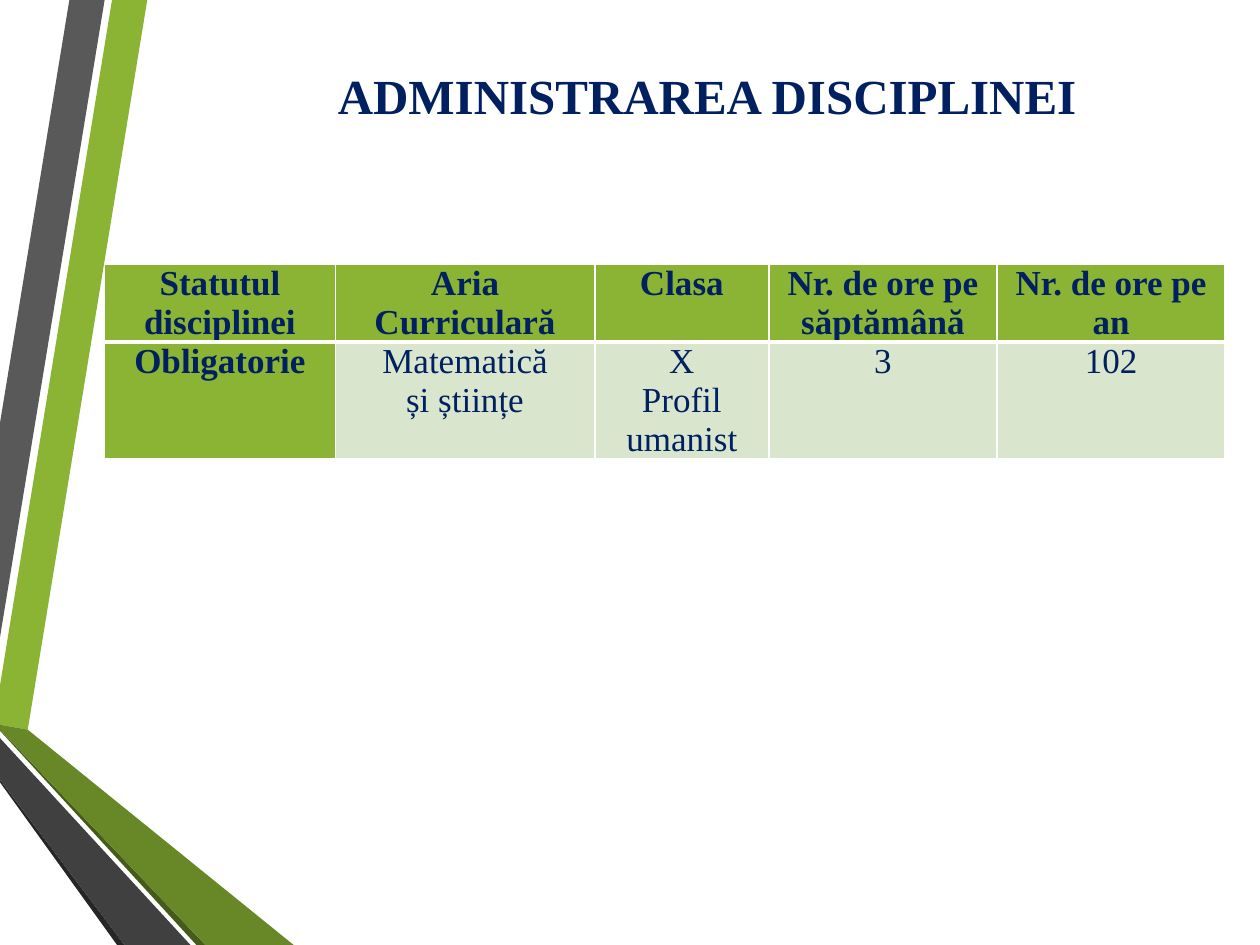
from lxml.etree import SubElement
from pptx import Presentation
from pptx.dml.color import RGBColor
from pptx.enum.text import MSO_ANCHOR, MSO_AUTO_SIZE, PP_ALIGN
from pptx.oxml.ns import qn
from pptx.util import Cm, Pt

NAVY = RGBColor(0x00, 0x20, 0x60)
WHITE = RGBColor(0xFF, 0xFF, 0xFF)
GREEN = RGBColor(0x8B, 0xB4, 0x34)
PALE_GREEN = RGBColor(0xDA, 0xE5, 0xCE)
OLIVE = RGBColor(0x68, 0x87, 0x27)
DARK_OLIVE = RGBColor(0x46, 0x5A, 0x1A)
GREY = RGBColor(0x59, 0x59, 0x59)
CHARCOAL = RGBColor(0x40, 0x40, 0x40)
BLACKISH = RGBColor(0x26, 0x26, 0x26)
FONT = "Times New Roman"

WIDTH, HEIGHT = 25.4, 19.05
RIBBONS = [
    (GREEN, [(0, 13.82), (0, 14.61), (0.56, 14.71), (2.97, 0), (2.26, 0)]),
    (GREY, [(2.11, 0), (1.4, 0), (0, 8.53), (0, 12.85)]),
    (BLACKISH, [(0, 15.72), (0, 15.77), (2.36, HEIGHT), (2.51, HEIGHT)]),
    (DARK_OLIVE, [(0, 14.71), (0, 14.73), (3.96, HEIGHT), (4.14, HEIGHT)]),
    (OLIVE, [(0, 14.71), (4.14, HEIGHT), (5.92, HEIGHT), (0.56, 14.71), (0, 14.61)]),
    (CHARCOAL, [(0, 15.72), (2.51, HEIGHT), (3.84, HEIGHT), (0, 14.88)]),
]
COLUMN_WIDTHS = [4.65, 5.23, 3.51, 4.6, 4.6]
ROW_HEIGHTS = [1.56, 2.34]
HOURS = [
    ["Statutul\ndisciplinei", "Aria\nCurriculară", "Clasa",
     "Nr. de ore pe\nsăptămână", "Nr. de ore pe\nan"],
    ["Obligatorie", "Matematică\nși științe", "X\nProfil umanist", "3", "102"],
]


def add_run(paragraph, wording, size, bold):
    """Add one navy run to a paragraph."""
    run = paragraph.add_run()
    run.text = wording
    font = run.font
    font.name, font.size, font.bold = FONT, Pt(size), bold
    font.color.rgb = NAVY


def add_ribbons(slide, left, top):
    """Draw the folded ribbons from the given corner."""
    for colour, outline in RIBBONS:
        corners = [(Cm(left + x), Cm(top + y)) for x, y in outline]
        builder = slide.shapes.build_freeform(*corners[0])
        builder.add_line_segments(corners[1:], close=True)
        ribbon = builder.convert_to_shape()
        ribbon.shadow.inherit = False
        ribbon.fill.solid()
        ribbon.fill.fore_color.rgb = colour
        ribbon.line.fill.background()


def add_title(slide, left, top, width, height):
    """Place the title placeholder in the given box."""
    title = slide.shapes.title
    title.left, title.top = Cm(left), Cm(top)
    title.width, title.height = Cm(width), Cm(height)
    frame = title.text_frame
    frame.word_wrap = True
    frame.auto_size = MSO_AUTO_SIZE.NONE
    frame.vertical_anchor = MSO_ANCHOR.TOP
    frame.margin_left, frame.margin_right = Cm(1.5), 0
    frame.margin_top = Cm(0.28)
    heading = frame.paragraphs[0]
    heading.alignment = PP_ALIGN.LEFT
    add_run(heading, "ADMINISTRAREA DISCIPLINEI", 28, True)


def add_borders(cell, top, bottom):
    """Give a cell white borders, 1 pt at the sides."""
    properties = cell._tc.get_or_add_tcPr()
    for side, points in (("L", 1), ("R", 1), ("T", top), ("B", bottom)):
        border = SubElement(properties, qn(f"a:ln{side}"), w=str(Pt(points)))
        fill = SubElement(border, qn("a:solidFill"))
        SubElement(fill, qn("a:srgbClr"), val=str(WHITE))


def fill_cell(cell, wording, is_header, is_label):
    """Write and format one cell of the hours table."""
    emphasised = is_header or is_label
    add_borders(cell, 1 if is_header else 3, 3 if is_header else 1)
    cell.fill.solid()
    cell.fill.fore_color.rgb = GREEN if emphasised else PALE_GREEN
    cell.margin_left = cell.margin_right = Cm(0.19)
    cell.margin_top = cell.margin_bottom = 0
    frame = cell.text_frame
    for index, line in enumerate(wording.split("\n")):
        paragraph = frame.add_paragraph() if index else frame.paragraphs[0]
        paragraph.alignment = PP_ALIGN.CENTER
        add_run(paragraph, line, 20, emphasised)


def add_hours_table(slide, left, top):
    """Place the table of teaching hours at the given corner."""
    hours = slide.shapes.add_table(
        len(ROW_HEIGHTS), len(COLUMN_WIDTHS), Cm(left), Cm(top),
        Cm(sum(COLUMN_WIDTHS)), Cm(sum(ROW_HEIGHTS))).table
    hours.horz_banding = False
    for column, width in zip(hours.columns, COLUMN_WIDTHS):
        column.width = Cm(width)
    for r, (row, height) in enumerate(zip(hours.rows, ROW_HEIGHTS)):
        row.height = Cm(height)
        for c, wording in enumerate(HOURS[r]):
            fill_cell(hours.cell(r, c), wording, r == 0, c == 0)


def main():
    """Build and save the slide."""
    deck = Presentation()
    deck.slide_width, deck.slide_height = Cm(WIDTH), Cm(HEIGHT)
    slide = deck.slides.add_slide(deck.slide_layouts.get_by_name("Title Only"))
    add_ribbons(slide, 0, 0)
    add_hours_table(slide, 2.11, 5.33)
    add_title(slide, 5.31, 1.04, 16.81, 2.24)
    deck.save("out.pptx")


if __name__ == "__main__":
    main()
